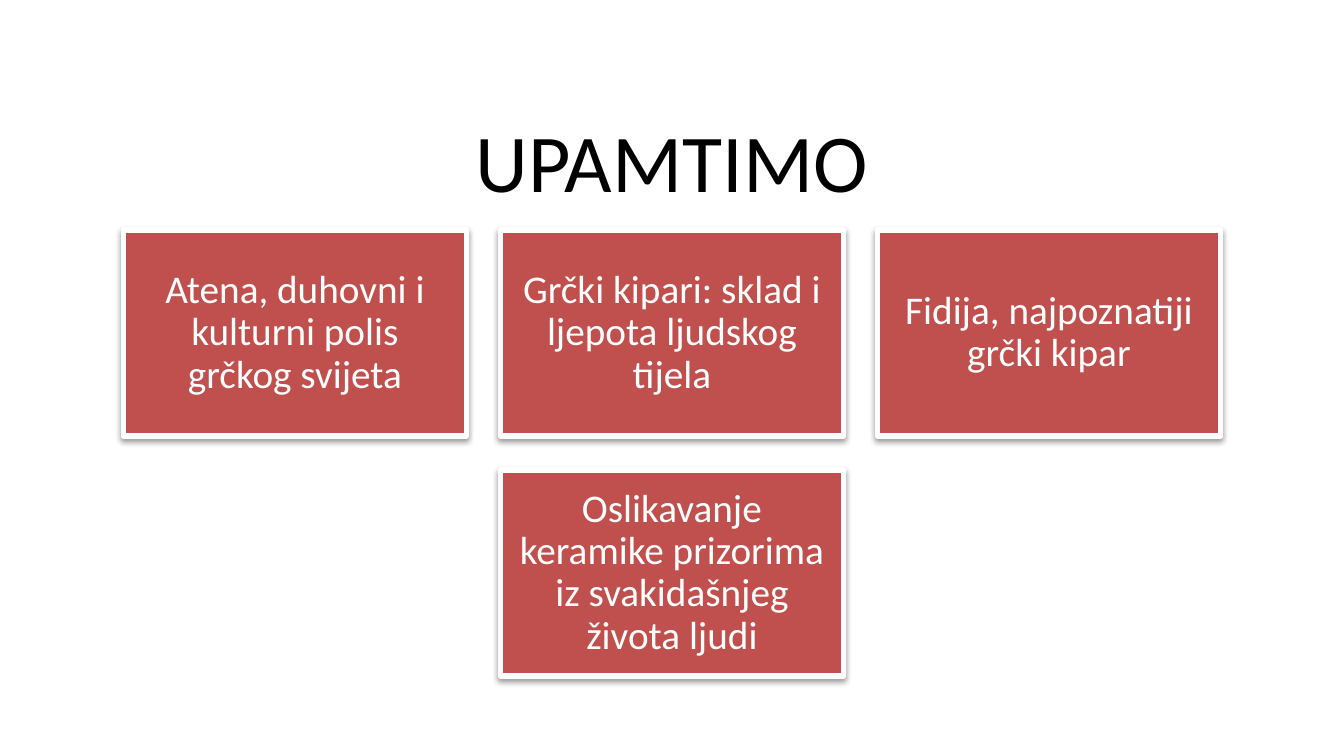
from dataclasses import dataclass

from lxml import etree
from pptx import Presentation
from pptx.dml.color import RGBColor
from pptx.enum.shapes import MSO_SHAPE
from pptx.enum.text import MSO_ANCHOR, MSO_AUTO_SIZE, PP_ALIGN
from pptx.oxml.ns import qn
from pptx.util import Pt

RECTANGLE = MSO_SHAPE.RECTANGLE
MIDDLE = MSO_ANCHOR.MIDDLE
CENTER = PP_ALIGN.CENTER
NO_AUTOFIT = MSO_AUTO_SIZE.NONE

TITLE = "UPAMTIMO"
CARD_ROWS = [
    [
        "Atena, duhovni i kulturni polis grčkog svijeta",
        "Grčki kipari: sklad i ljepota ljudskog tijela",
        "Fidija, najpoznatiji grčki kipar",
    ],
    ["Oslikavanje keramike prizorima iz svakidašnjeg života ljudi"],
]


@dataclass(frozen=True)
class Theme:
    font: str = "Calibri"
    title_size: int = 44
    card_size: int = 21
    border_width: int = 3
    line_spacing: float = 0.9
    title_color: RGBColor = RGBColor(0, 0, 0)
    card_fill: RGBColor = RGBColor(0xC0, 0x50, 0x4D)
    card_text: RGBColor = RGBColor(255, 255, 255)
    shadow_color: str = "000000"


THEME = Theme()

# Lengths in px
SLIDE_WIDTH, SLIDE_HEIGHT = 1344, 756
TITLE_BOX = (67, 113, 1210, 105)
CARD_WIDTH, CARD_HEIGHT = 343, 206
CARD_GAP = 34
CARDS_TOP = 230
CARD_INSET = 12


def px(length):
    return round(length * 914400 / 134.4)


def set_text(shape, text, size, color):
    frame = shape.text_frame
    frame.text = text
    frame.word_wrap = True
    frame.auto_size = NO_AUTOFIT
    frame.vertical_anchor = MIDDLE
    paragraph = frame.paragraphs[0]
    paragraph.alignment = CENTER
    paragraph.line_spacing = THEME.line_spacing
    paragraph.font.name = THEME.font
    paragraph.font.size = Pt(size)
    paragraph.font.color.rgb = color


def add_shadow(shape):
    shape.shadow.inherit = False
    effects = shape.element.spPr.find(qn("a:effectLst"))
    shadow = etree.SubElement(
        effects, qn("a:outerShdw"),
        blurRad=str(Pt(3.1)), dist=str(Pt(1.6)), dir="5400000", rotWithShape="0",
    )
    color = etree.SubElement(shadow, qn("a:srgbClr"), val=THEME.shadow_color)
    etree.SubElement(color, qn("a:alpha"), val="38000")


def add_card(slide, text, left, top):
    card = slide.shapes.add_shape(
        RECTANGLE, px(left), px(top), px(CARD_WIDTH), px(CARD_HEIGHT)
    )
    card.fill.solid()
    card.fill.fore_color.rgb = THEME.card_fill
    card.line.color.rgb = THEME.card_text
    card.line.width = Pt(THEME.border_width)
    add_shadow(card)
    frame = card.text_frame
    frame.margin_left = frame.margin_right = px(CARD_INSET)
    frame.margin_top = frame.margin_bottom = px(CARD_INSET)
    set_text(card, text, THEME.card_size, THEME.card_text)


def main():
    presentation = Presentation()
    presentation.slide_width = px(SLIDE_WIDTH)
    presentation.slide_height = px(SLIDE_HEIGHT)
    slide = presentation.slides.add_slide(presentation.slide_layouts[5])

    title = slide.shapes.title
    title.left, title.top, title.width, title.height = map(px, TITLE_BOX)
    set_text(title, TITLE, THEME.title_size, THEME.title_color)

    for row, texts in enumerate(CARD_ROWS):
        row_width = len(texts) * (CARD_WIDTH + CARD_GAP) - CARD_GAP
        row_left = (SLIDE_WIDTH - row_width) / 2
        top = CARDS_TOP + row * (CARD_HEIGHT + CARD_GAP)
        for column, text in enumerate(texts):
            add_card(slide, text, row_left + column * (CARD_WIDTH + CARD_GAP), top)

    presentation.save("out.pptx")


if __name__ == "__main__":
    main()
